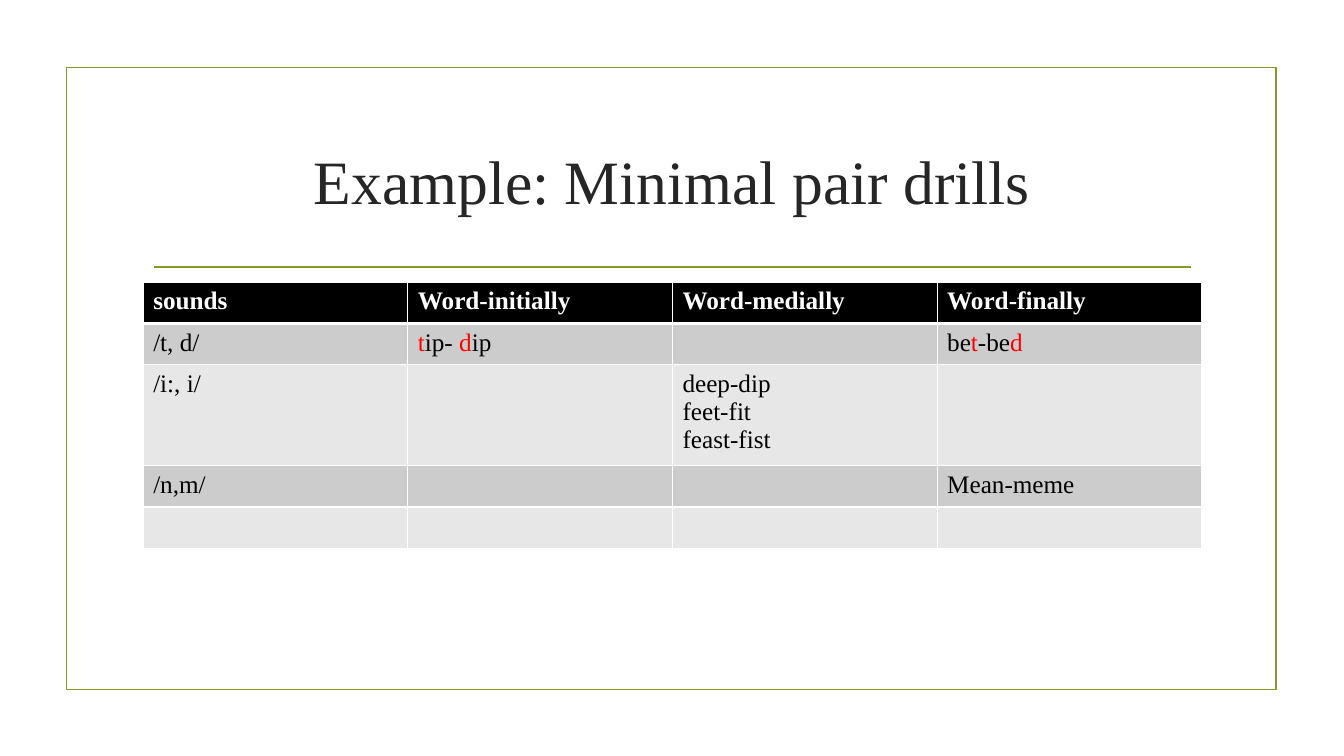
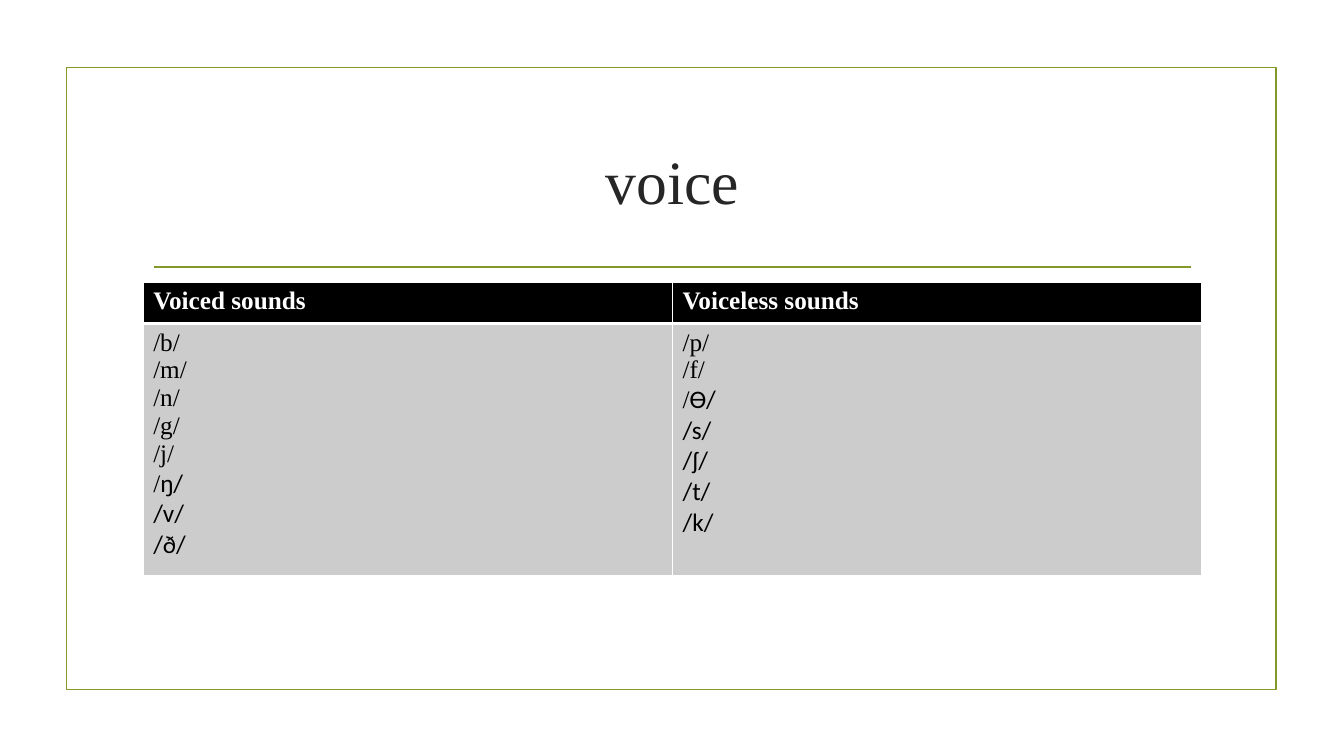
from lxml import etree
from pptx import Presentation
from pptx.dml.color import RGBColor
from pptx.enum.shapes import MSO_CONNECTOR, MSO_SHAPE
from pptx.enum.text import MSO_ANCHOR, PP_ALIGN
from pptx.oxml.ns import qn
from pptx.util import Inches, Pt

RECTANGLE = MSO_SHAPE.RECTANGLE
STRAIGHT = MSO_CONNECTOR.STRAIGHT
MIDDLE = MSO_ANCHOR.MIDDLE
LEFT, CENTER = PP_ALIGN.LEFT, PP_ALIGN.CENTER

SERIF, SANS = "Times New Roman", "Calibri"
GREEN, INK, BLACK, WHITE, RED = "83992A", "262626", "000000", "FFFFFF", "FF0000"
BANDS = ("CCCCCC", "E7E7E7")
SLIDE_SIZE = (13.33, 7.5)
FRAME_BOX = (0.66, 0.67, 12, 6.17)
TITLE_BOX = (1.42, 1.07, 10.5, 1.43)
RULE_INSET, RULE_DROP = 0.11, 0.15
TABLE_DROP = 0.3
ROW = 0.41


def color(value):
    return RGBColor.from_string(value)


def write(text_frame, paragraphs, size=18, font=SERIF, ink=BLACK, bold=False, align=LEFT):
    for index, runs in enumerate(paragraphs):
        paragraph = text_frame.paragraphs[0] if index == 0 else text_frame.add_paragraph()
        paragraph.alignment = align
        for part in [runs] if isinstance(runs, str) else runs:
            wording, changes = (part, {}) if isinstance(part, str) else part
            run = paragraph.add_run()
            run.text = wording
            run.font.size = Pt(size)
            run.font.bold = bold
            run.font.name = changes.get("font", font)
            run.font.color.rgb = color(changes.get("ink", ink))


def red(wording):
    return wording, {"ink": RED}


def sans(wording):
    return wording, {"font": SANS}


def style_line(line):
    line.color.rgb = color(GREEN)
    line.width = Pt(1.25)


def add_frame(slide, box):
    frame = slide.shapes.add_shape(RECTANGLE, *map(Inches, box))
    frame.shadow.inherit = False
    frame.fill.background()
    style_line(frame.line)


def add_title(slide, box, wording):
    left, top, width, height = box
    rule_y = top + height + RULE_DROP
    ends = (left + RULE_INSET, rule_y, left + width - RULE_INSET, rule_y)
    rule = slide.shapes.add_connector(STRAIGHT, *map(Inches, ends))
    style_line(rule.line)
    etree.SubElement(rule._element.spPr, qn("a:effectLst"))
    title = slide.shapes.add_textbox(*map(Inches, box)).text_frame
    title.word_wrap = True
    title.vertical_anchor = MIDDLE
    write(title, [wording], size=44, ink=INK, align=CENTER)


def set_borders(cell, **widths):
    properties = cell._tc.get_or_add_tcPr()
    for side in "LRTB":
        border = etree.SubElement(properties, qn(f"a:ln{side}"), w=str(Pt(widths.get(side, 1))))
        fill = etree.SubElement(border, qn("a:solidFill"))
        etree.SubElement(fill, qn("a:srgbClr"), val=WHITE)


def add_sound_table(slide, left, top, width, rows, heights):
    columns = len(rows[0])
    box = (left, top, width, sum(heights))
    table = slide.shapes.add_table(len(rows), columns, *map(Inches, box)).table
    for column in table.columns:
        column.width = Inches(width / columns)
    for r, (entries, height) in enumerate(zip(rows, heights)):
        table.rows[r].height = Inches(height)
        for c, paragraphs in enumerate(entries):
            cell = table.cell(r, c)
            header = r == 0
            set_borders(cell, B=3 if header else 1, T=3 if r == 1 else 1)
            cell.fill.solid()
            cell.fill.fore_color.rgb = color(BLACK if header else BANDS[(r - 1) % 2])
            write(cell.text_frame, paragraphs, ink=WHITE if header else BLACK, bold=header)


def add_table_slide(deck, title, rows, heights):
    slide = deck.slides.add_slide(deck.slide_layouts[6])
    add_frame(slide, FRAME_BOX)
    add_title(slide, TITLE_BOX, title)
    left, top, width, height = TITLE_BOX
    add_sound_table(slide, left, top + height + TABLE_DROP, width, rows, heights)


MINIMAL_PAIRS = [
    [["sounds"], ["Word-initially"], ["Word-medially"], ["Word-finally"]],
    [["/t, d/"], [[red("t"), "ip- ", red("d"), "ip"]], [], [["be", red("t"), "-be", red("d")]]],
    [["/i:, i/"], [], ["deep-dip", "feet-fit", "feast-fist"], []],
    [["/n,m/"], [], [], ["Mean-meme"]],
    [[], [], [], []],
]

VOICED = ["/b/", "/m/", "/n/", "/g/", "/j/", ["/", sans("ŋ/")], [sans("/v/")], [sans("/ð/")]]
VOICELESS = ["/p/", "/f/", ["/", sans("Ɵ/")]] + [[sans(s)] for s in ("/s/", "/ʃ/", "/t/", "/k/")]
VOICE = [[["Voiced sounds"], ["Voiceless sounds"]], [VOICED, VOICELESS]]


def main():
    deck = Presentation()
    deck.slide_width, deck.slide_height = map(Inches, SLIDE_SIZE)
    add_table_slide(deck, "Example: Minimal pair drills", MINIMAL_PAIRS, [ROW, ROW, 0.93, ROW, ROW])
    add_table_slide(deck, "voice", VOICE, [ROW, 2.39])
    deck.save("out.pptx")


if __name__ == "__main__":
    main()
